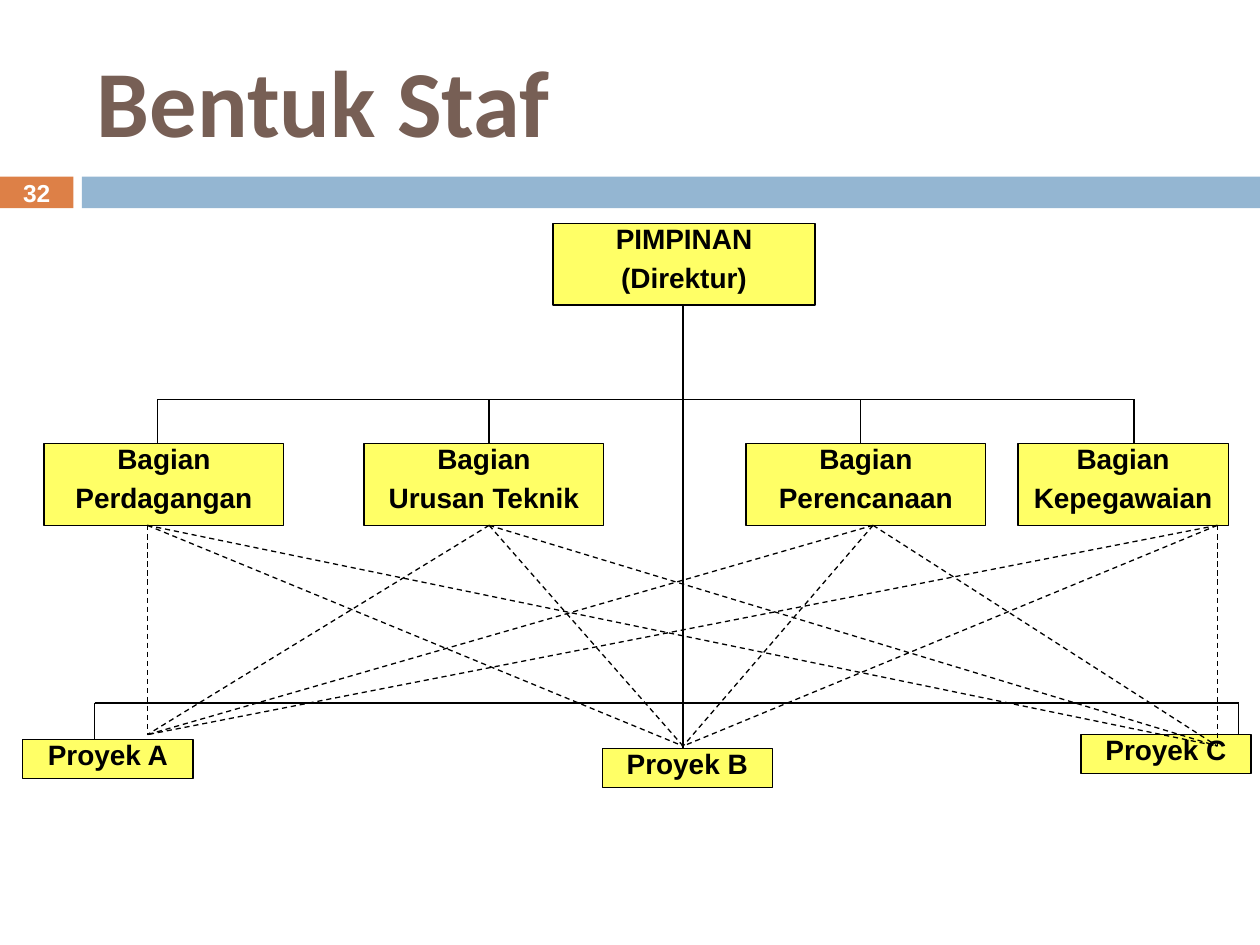
from itertools import product
from pptx import Presentation
from pptx import util as u
from pptx.dml.color import RGBColor
from pptx.enum import dml, shapes, text
from pptx.oxml.ns import qn
from lxml import etree

COLOURS = {"title": "775F55", "number": "DD8047", "band": "94B6D2",
           "unit": "FFFF66", "ink": "000000", "white": "FFFFFF"}


def colour(name):
    return RGBColor.from_string(COLOURS[name])


def add_box(slide, left, top, width, height, fill):
    box = slide.shapes.add_shape(shapes.MSO_SHAPE.RECTANGLE,
                                 u.Cm(left), u.Cm(top), u.Cm(width), u.Cm(height))
    box.shadow.inherit = False
    box.fill.solid()
    box.fill.fore_color.rgb = colour(fill)
    box.line.fill.background()
    return box


def add_run(paragraph, words, size, ink, font="Arial"):
    run = paragraph.add_run()
    run.text = words
    run.font.name = font
    run.font.size = u.Pt(size)
    run.font.bold = True
    run.font.color.rgb = colour(ink)


def add_title(slide, left, top, width, height):
    title = slide.shapes.add_textbox(u.Cm(left), u.Cm(top), u.Cm(width), u.Cm(height))
    frame = title.text_frame
    frame.word_wrap = True
    frame.vertical_anchor = text.MSO_ANCHOR.MIDDLE
    add_run(frame.paragraphs[0], "Bentuk Staf", 54, "title", "Calibri")


def add_band(slide, left, top, width, height):
    number_width, gap = 1.48, 0.17
    number = add_box(slide, left, top, number_width, height, "number")
    frame = number.text_frame
    frame.margin_top = frame.margin_bottom = 0
    frame.vertical_anchor = text.MSO_ANCHOR.MIDDLE
    frame.paragraphs[0].alignment = text.PP_ALIGN.CENTER
    add_run(frame.paragraphs[0], "32", 14, "white")
    band_left = number_width + gap
    add_box(slide, left + band_left, top, width - band_left, height, "band")


def add_unit(slide, left, top, width, height, lines):
    unit = add_box(slide, left, top, width, height, "unit")
    unit.line.color.rgb = colour("ink")
    unit.line.width = u.Pt(0.75)
    frame = unit.text_frame
    frame.word_wrap = True
    frame.vertical_anchor = text.MSO_ANCHOR.TOP
    for index, words in enumerate(lines):
        paragraph = frame.add_paragraph() if index else frame.paragraphs[0]
        paragraph.alignment = text.PP_ALIGN.CENTER
        paragraph.line_spacing = 0.75
        paragraph.space_before = u.Pt(8 if index else 0)
        add_run(paragraph, words, 16, "ink")


def add_link(slide, start, end, dashed=False):
    link = slide.shapes.add_connector(shapes.MSO_CONNECTOR.STRAIGHT,
                                      *(u.Cm(value) for value in (*start, *end)))
    link.line.color.rgb = colour("ink")
    link.line.width = u.Pt(0.75)
    if dashed:
        link.line.dash_style = dml.MSO_LINE.DASH
    etree.SubElement(link._element.spPr, qn("a:effectLst"))


def add_chart_of_staff(slide, left, top):
    unit_height, project_width, project_height = 1.65, 3.43, 0.79
    trunk, staff_bus, staff_top, project_bus = 13.77, 3.55, 4.44, 9.67
    staff = [("Perdagangan", 0.89, 4.83, 3.18, 2.97),
             ("Urusan Teknik", 7.34, 4.83, 9.86, 9.86),
             ("Perencanaan", 15.04, 4.83, 17.35, 17.6),
             ("Kepegawaian", 20.52, 4.24, 22.86, 24.54)]
    projects = [("Proyek A", 0.46, 10.41, 2.97, 10.31),
                ("Proyek B", 12.14, 10.59, trunk, 10.54),
                ("Proyek C", 21.79, 10.31, 24.54, 10.54)]
    project_drops = [(1.91, 10.41), (24.97, 10.31)]

    def link(x1, y1, x2, y2, dashed=False):
        add_link(slide, (left + x1, top + y1), (left + x2, top + y2), dashed)

    link(trunk, unit_height, trunk, 10.59)
    link(staff[0][3], staff_bus, staff[-1][3], staff_bus)
    for _, _, _, drop, _ in staff:
        link(drop, staff_bus, drop, staff_top)
    link(project_drops[0][0], project_bus, project_drops[1][0], project_bus)
    for drop, end in project_drops:
        link(drop, project_bus, drop, end)

    add_unit(slide, left + 11.15, top, 5.28, unit_height, ["PIMPINAN", "(Direktur)"])
    for name, x, width, _, _ in staff:
        add_unit(slide, left + x, top + staff_top, width, unit_height, ["Bagian", name])
    for name, x, y, _, _ in projects:
        add_unit(slide, left + x, top + y, project_width, project_height, [name])

    for division, project in product(staff, projects):
        link(division[4], staff_top + unit_height, *project[3:], dashed=True)


def main():
    deck = Presentation()
    deck.slide_width, deck.slide_height = u.Cm(25.4), u.Cm(19.05)
    slide = deck.slides.add_slide(deck.slide_layouts[6])
    add_band(slide, 0, 3.56, 25.4, 0.64)
    add_title(slide, 1.7, 0.64, 22.65, 2.74)
    add_chart_of_staff(slide, 0, 4.5)
    deck.save("out.pptx")


if __name__ == "__main__":
    main()
